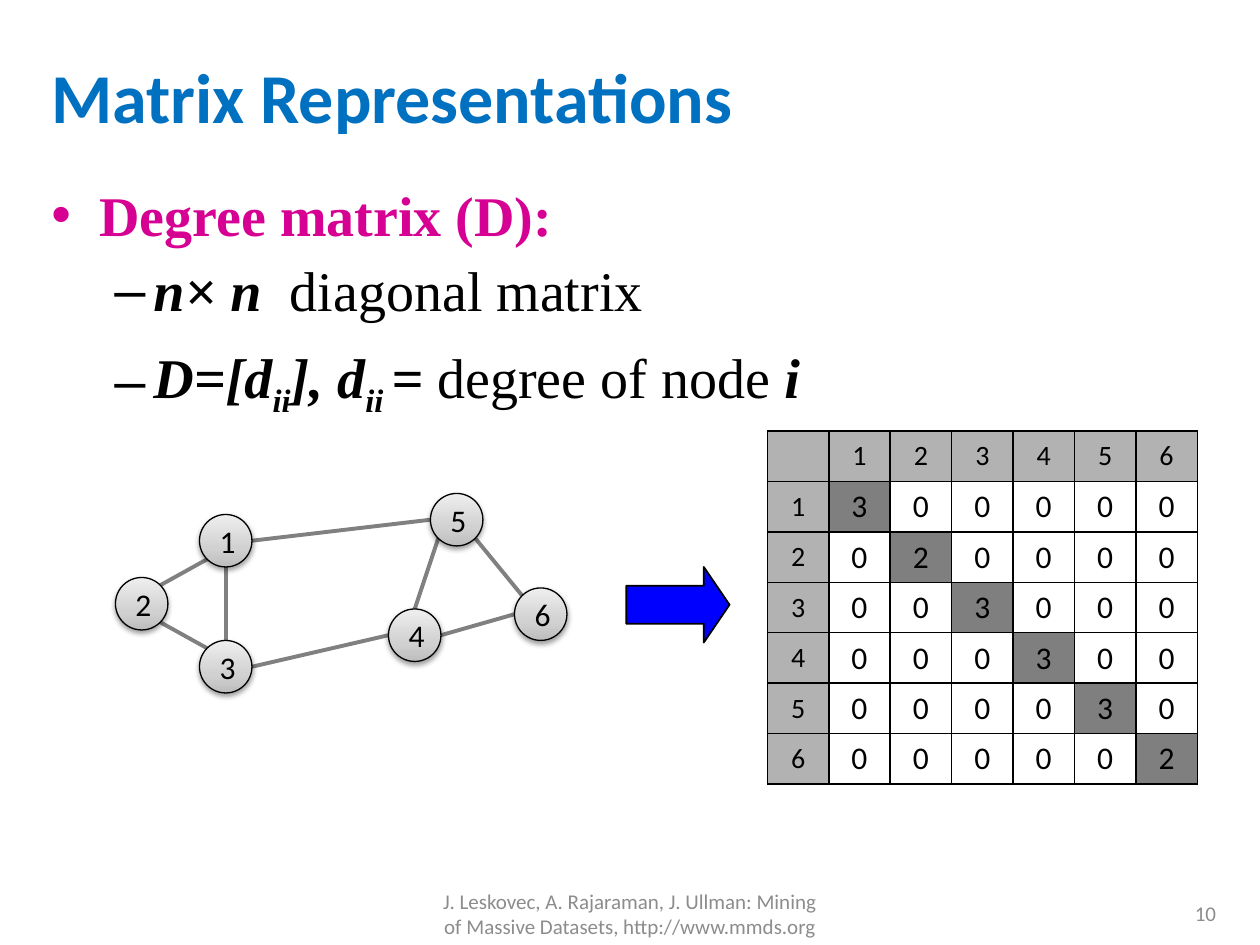
from lxml import etree
from pptx import Presentation
from pptx import util as u
from pptx.dml.color import RGBColor
from pptx.enum import shapes, text
from pptx.oxml import parse_xml
from pptx.oxml.ns import qn

NS = 'xmlns:a="http://schemas.openxmlformats.org/drawingml/2006/main"'
COLORS = {"title": "0070C0", "topic": "D60093", "ink": "000000", "footer": "8C8C8C",
          "arrow": "0000FF", "edge": "808080", "header": "B2B2B2"}
LEFT, CENTER, RIGHT = text.PP_ALIGN.LEFT, text.PP_ALIGN.CENTER, text.PP_ALIGN.RIGHT
MIDDLE, TOP = text.MSO_ANCHOR.MIDDLE, text.MSO_ANCHOR.TOP

deck = Presentation()
deck.slide_width, deck.slide_height = u.Inches(10), u.Inches(7.5)
slide = deck.slides.add_slide(deck.slide_layouts[6])
UNIT = deck.slide_width / 120


def grid(*cells):
    return [u.Emu(round(cell * UNIT)) for cell in cells]


def write(paragraph, words, color, size, face="Calibri", **formats):
    run = paragraph.add_run()
    run.text = words
    run.font.color.rgb = RGBColor.from_string(COLORS[color])
    for name, value in {"size": u.Pt(size), "name": face, **formats}.items():
        setattr(run.font, name, value)
    return run


captions = [
    ("Matrix Representations", (3.72, 3.84, 113.5, 10.56), LEFT, "title", 40, True),
    ("J. Leskovec, A. Rajaraman, J. Ullman: Mining of Massive Datasets, http://www.mmds.org",
     (41, 84.6, 38, 4.8), CENTER, "footer", 12, False),
    ("10", (89, 84.6, 28, 4.8), RIGHT, "footer", 12, False),
]
for words, place, align, color, size, bold in captions:
    frame = slide.shapes.add_textbox(*grid(*place)).text_frame
    frame.word_wrap, frame.vertical_anchor = True, MIDDLE
    frame.paragraphs[0].alignment = align
    write(frame.paragraphs[0], words, color, size, bold=bold)

STRONG, PLAIN, SUB = (True, True, 0), (False, False, 0), (True, True, -25000)
points = [
    ("•", 0, 0.38, 0.38, 6.4, "topic", [("Degree matrix (D):", (True, False, 0))]),
    ("–", 1, 0.81, 0.31, 5, "ink", [("n× n", STRONG), ("  diagonal matrix", PLAIN)]),
    ("–", 1, 0.81, 0.31, 11, "ink", [
        ("D=[d", STRONG), ("ii", SUB), ("], d", STRONG), ("ii ", SUB), ("= ", STRONG),
        ("degree of node ", PLAIN), ("i", STRONG)]),
]
body = slide.shapes.add_textbox(*grid(3.72, 16.56, 113.5, 67)).text_frame
body.word_wrap, body.vertical_anchor = True, TOP
for index, (bullet, level, margin, hang, gap, color, pieces) in enumerate(points):
    point = body.add_paragraph() if index else body.paragraphs[0]
    point.level, point.space_before = level, u.Pt(gap)
    properties = point._p.get_or_add_pPr()
    properties.set("marL", str(u.Inches(margin)))
    properties.set("indent", str(-u.Inches(hang)))
    etree.SubElement(properties, qn("a:buFont")).set("typeface", "Arial")
    etree.SubElement(properties, qn("a:buChar")).set("char", bullet)
    for words, (bold, italic, baseline) in pieces:
        run = write(point, words, color, 32, "Times New Roman", bold=bold, italic=italic)
        if baseline:
            run._r.get_or_add_rPr().set("baseline", str(baseline))

arrow = slide.shapes.add_shape(shapes.MSO_SHAPE.RIGHT_ARROW, *grid(59.64, 54, 9.84, 7.2))
arrow.shadow.inherit = False
arrow.adjustments[0], arrow.adjustments[1] = 0.5, 0.34
arrow.fill.solid()
arrow.fill.fore_color.rgb = RGBColor.from_string(COLORS["arrow"])
arrow.line.color.rgb = RGBColor.from_string(COLORS["ink"])
arrow.line.width = u.Pt(1)

NODE = 5
nodes = {1: (19, 49), 3: (19, 61), 2: (11, 55), 5: (41, 47), 4: (37, 58), 6: (49, 56)}
rim = {"n": (0.5, 0), "s": (0.5, 1), "w": (0, 0.5), "e": (1, 0.5),
       "nw": (0.15, 0.15), "ne": (0.85, 0.15), "sw": (0.15, 0.85), "se": (0.85, 0.85)}
edges = [(1, "sw", 2, "ne"), (2, "se", 3, "nw"), (1, "s", 3, "n"), (1, "e", 5, "w"),
         (3, "e", 4, "w"), (5, "se", 6, "nw"), (4, "e", 6, "w"), (5, "sw", 4, "n")]
graph = slide.shapes.add_group_shape()
for start, start_side, end, end_side in edges:
    ends = [corner + NODE * share
            for node, side in ((start, start_side), (end, end_side))
            for corner, share in zip(nodes[node], rim[side])]
    edge = graph.shapes.add_connector(shapes.MSO_CONNECTOR.STRAIGHT, *grid(*ends))
    edge.line.color.rgb = RGBColor.from_string(COLORS["edge"])
    edge.line.width = u.Pt(2.25)
    etree.SubElement(edge._element.spPr, qn("a:effectLst"))

stops = "".join(f'<a:gs pos="{share * 1000}"><a:srgbClr val="{shade}"/></a:gs>'
                for share, shade in ((0, "BDBDBD"), (35, "D1D1D1"), (100, "EEEEEE")))
GRADIENT = f'<a:gradFill {NS}><a:gsLst>{stops}</a:gsLst><a:lin ang="16200000"/></a:gradFill>'
SHADOW = (f'<a:outerShdw {NS} blurRad="{u.Pt(3.1)}" dist="{u.Pt(1.6)}" dir="5400000">'
          f'<a:srgbClr val="{COLORS["ink"]}"><a:alpha val="38000"/></a:srgbClr></a:outerShdw>')
for label, corner in nodes.items():
    node = graph.shapes.add_shape(shapes.MSO_SHAPE.OVAL, *grid(*corner, NODE, NODE))
    node.shadow.inherit = False
    node.line.color.rgb = RGBColor.from_string(COLORS["ink"])
    node.line.width = u.Pt(0.75)
    node.fill.background()
    look = node._element.spPr
    look.replace(look.find(qn("a:noFill")), parse_xml(GRADIENT))
    look.find(qn("a:effectLst")).append(parse_xml(SHADOW))
    node.text_frame.vertical_anchor = MIDDLE
    node.text_frame.paragraphs[0].alignment = CENTER
    write(node.text_frame.paragraphs[0], str(label), "ink", 18)

degrees = [sum(node in (start, end) for start, _, end, _ in edges) for node in range(1, 7)]
COUNT = len(degrees) + 1
COLUMN, ROW = 5.85, 4.68
matrix = slide.shapes.add_table(
    COUNT, COUNT, *grid(73.08, 41.04, COLUMN * COUNT, ROW * COUNT)).table
matrix.first_row = matrix.horz_banding = False
for line in range(COUNT):
    matrix.columns[line].width, matrix.rows[line].height = grid(COLUMN, ROW)
    for column in range(COUNT):
        cell = matrix.cell(line, column)
        header, diagonal = line * column == 0, line == column
        value = (line + column or "") if header else degrees[line - 1] if diagonal else 0
        cell.vertical_anchor = MIDDLE
        if header:
            cell.margin_left = cell.margin_right = u.Inches(0.08)
        entry = cell.text_frame.paragraphs[0]
        size = 16 if header else 18
        entry.alignment, entry.space_before = CENTER, u.Pt(size * 0.2)
        if value != "":
            write(entry, str(value), "ink", size)
        if header or diagonal:
            cell.fill.solid()
            cell.fill.fore_color.rgb = RGBColor.from_string(COLORS["header" if header else "ink"])
        else:
            cell.fill.background()
        look = cell._tc.get_or_add_tcPr()
        if diagonal and not header:
            etree.SubElement(look.find(".//" + qn("a:srgbClr")), qn("a:alpha")).set("val", "50000")
        for place, side in enumerate(("lnL", "lnR", "lnT", "lnB")):
            look.insert(place, parse_xml(
                f'<a:{side} {NS} w="{u.Pt(1)}"><a:solidFill>'
                f'<a:srgbClr val="{COLORS["ink"]}"/></a:solidFill></a:{side}>'))

deck.save("out.pptx")
